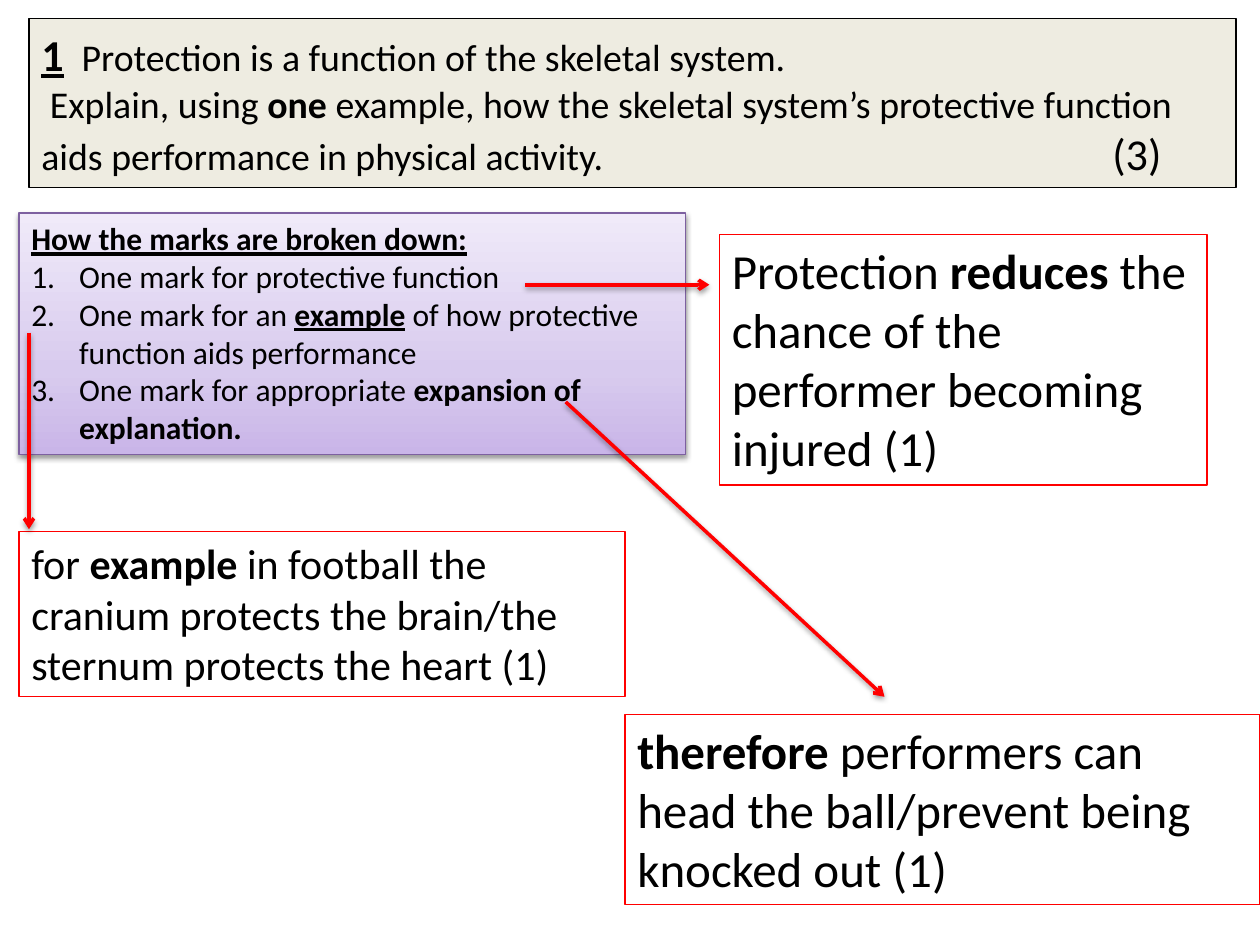
from copy import deepcopy
from dataclasses import dataclass

from lxml.etree import SubElement
from pptx import Presentation
from pptx.dml.color import RGBColor
from pptx.enum.shapes import MSO_CONNECTOR, MSO_SHAPE
from pptx.enum.text import MSO_ANCHOR, MSO_AUTO_SIZE, PP_ALIGN
from pptx.oxml.ns import qn
from pptx.util import Inches, Pt


@dataclass(frozen=True)
class Theme:
    font: str = "Calibri"
    ink: str = "000000"
    accent: str = "FF0000"
    question_fill: str = "EEECE1"
    marks_line: str = "7D60A0"
    marks_stops: tuple = ((0, "C9B5E8"), (0.35, "D8CBEE"), (1, "F0EAF9"))
    thin: float = 0.75
    thick: float = 2
    heading: float = 25.2
    question: float = 21.6
    marks: float = 18
    example: float = 24
    answer: float = 28


BOLD = {"bold": True}
MARKED = {"bold": True, "underline": True}


def add_xml(parent, tag, **attributes):
    child = SubElement(parent, qn(tag))
    for name, value in attributes.items():
        child.set(name, str(value))
    return child


class PageBuilder:
    def __init__(self, page, theme):
        self.page = page
        self.theme = theme

    def box(self, left, top, width, height, line, fill=None, stops=None):
        box = self.page.shapes.add_shape(
            MSO_SHAPE.RECTANGLE, Inches(left), Inches(top), Inches(width), Inches(height))
        if stops:
            self.gradient(box, stops)
        elif fill:
            box.fill.solid()
            box.fill.fore_color.rgb = RGBColor.from_string(fill)
        else:
            box.fill.background()
        box.line.color.rgb = RGBColor.from_string(line)
        box.line.width = Pt(self.theme.thin)
        box.shadow.inherit = False
        frame = box.text_frame
        settings = {"word_wrap": True, "vertical_anchor": MSO_ANCHOR.TOP,
                    "auto_size": MSO_AUTO_SIZE.SHAPE_TO_FIT_TEXT}
        for name, value in settings.items():
            setattr(frame, name, value)
        return box

    def gradient(self, box, stops):
        box.fill.gradient()
        box.fill.gradient_angle = 90
        stop_list = box.element.spPr.find(f".//{qn('a:gsLst')}")
        stop_list.append(deepcopy(stop_list[0]))
        for stop, (position, color) in zip(box.fill.gradient_stops, stops):
            stop.position = position
            stop.color.rgb = RGBColor.from_string(color)

    def shadow(self, shape):
        properties = shape.element.spPr
        effects = properties.find(qn("a:effectLst"))
        if effects is None:
            effects = add_xml(properties, "a:effectLst")
        outer = add_xml(effects, "a:outerShdw", blurRad=Pt(3.1), dist=Pt(1.6),
                        dir=5400000, rotWithShape=0)
        color = add_xml(outer, "a:srgbClr", val=self.theme.ink)
        add_xml(color, "a:alpha", val=38000)

    def paragraph(self, box, spans, size, first=True):
        frame = box.text_frame
        para = frame.paragraphs[0] if first else frame.add_paragraph()
        para.alignment = PP_ALIGN.LEFT
        for text, style in spans:
            if text == "\n":
                para.add_line_break()
                continue
            span = para.add_run()
            span.text = text
            span.font.color.rgb = RGBColor.from_string(self.theme.ink)
            values = {"name": self.theme.font, "size": Pt(size), "bold": False, **style}
            for name, value in values.items():
                setattr(span.font, name, value)
        return para

    def number(self, para, indent):
        properties = para._p.get_or_add_pPr()
        properties.set("marL", str(Inches(indent)))
        properties.set("indent", str(-Inches(indent)))
        add_xml(properties, "a:buFont", typeface="+mj-lt")
        add_xml(properties, "a:buAutoNum", type="arabicPeriod")

    def tabs(self, para, positions):
        tab_list = add_xml(para._p.get_or_add_pPr(), "a:tabLst")
        for position in positions:
            add_xml(tab_list, "a:tab", pos=Inches(position), algn="l")

    def answer(self, left, top, width, height, spans, size):
        box = self.box(left, top, width, height, self.theme.accent)
        self.paragraph(box, spans, size)

    def arrow(self, start, end):
        arrow = self.page.shapes.add_connector(
            MSO_CONNECTOR.STRAIGHT, *(Inches(value) for value in start + end))
        arrow.line.color.rgb = RGBColor.from_string(self.theme.accent)
        arrow.line.width = Pt(self.theme.thick)
        add_xml(arrow.element.spPr.find(qn("a:ln")), "a:tailEnd", type="arrow")
        self.shadow(arrow)


def main():
    deck = Presentation()
    deck.slide_width, deck.slide_height = Inches(10), Inches(7.5)
    theme = Theme()
    builder = PageBuilder(deck.slides.add_slide(deck.slide_layouts[6]), theme)

    large = {"size": Pt(theme.heading)}
    question = builder.box(0.23, 0.15, 9.58, 1.34, theme.ink, fill=theme.question_fill)
    question.text_frame.auto_size = MSO_AUTO_SIZE.NONE
    question.text_frame.vertical_anchor = MSO_ANCHOR.MIDDLE
    para = builder.paragraph(question, [
        ("1", {**MARKED, **large}),
        ("\tProtection is a function of the skeletal system.", {}),
        ("\n", {}),
        (" Explain, using ", {}),
        ("one", BOLD),
        (" example, how the skeletal system’s protective function "
         "aids performance in physical activity.\t", {}),
        ("(3)", large),
    ], theme.question)
    builder.tabs(para, (0.32, 8.5))

    marks = builder.box(0.15, 1.69, 5.29, 1.92, theme.marks_line, stops=theme.marks_stops)
    builder.shadow(marks)
    builder.paragraph(marks, [("How the marks are broken down:", MARKED)], theme.marks)
    for spans in (
        [("One mark for protective function", {})],
        [("One mark for an ", {}), ("example", MARKED),
         (" of how protective function aids performance", {})],
        [("One mark for appropriate ", {}), ("expansion of explanation.", BOLD)],
    ):
        para = builder.paragraph(marks, spans, theme.marks, first=False)
        builder.number(para, 0.38)

    builder.arrow((4.17, 2.26), (5.63, 2.26))
    builder.answer(5.71, 1.86, 3.87, 1.99, [
        ("Protection ", {}), ("reduces ", BOLD),
        ("the chance of the performer becoming injured (1)", {})], theme.answer)
    builder.answer(0.15, 4.22, 4.81, 1.31, [
        ("for ", {}), ("example ", BOLD),
        ("in football the cranium protects the brain/the sternum protects the heart (1)", {}),
    ], theme.example)
    builder.arrow((0.23, 2.64), (0.23, 4.2))
    builder.answer(4.96, 5.67, 5.04, 1.51, [
        ("therefore ", BOLD),
        ("performers can head the ball/prevent being knocked out (1)", {})], theme.answer)
    builder.arrow((4.49, 3.19), (7.02, 5.53))

    deck.save("out.pptx")


if __name__ == "__main__":
    main()
